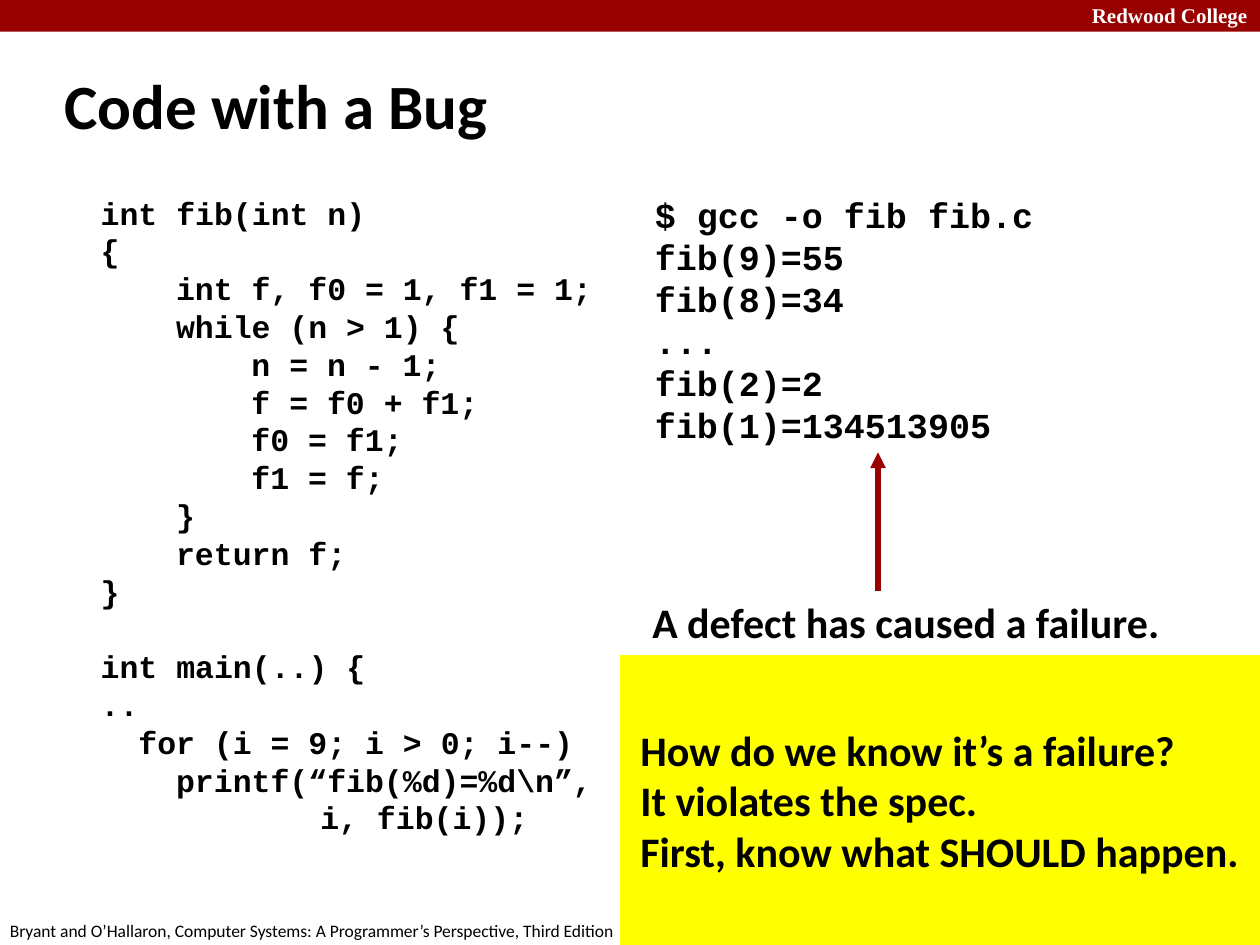
from lxml.etree import SubElement
from pptx import Presentation
from pptx.dml.color import RGBColor
from pptx.enum.shapes import MSO_CONNECTOR, MSO_SHAPE
from pptx.enum.text import MSO_ANCHOR, PP_ALIGN
from pptx.oxml.ns import qn
from pptx.util import Cm, Pt

COLORS = {"red": "990000", "yellow": "FFFF00", "black": "000000", "white": "FFFFFF"}
SANS, MONO, SERIF = "Calibri", "Courier New", "Times New Roman"
CHARACTER_WIDTH = 0.38
CODE_PITCH = 21.6

HEADER = "Redwood College"
FOOTER = "Bryant and O’Hallaron, Computer Systems: A Programmer’s Perspective, Third Edition"
TITLE = "Code with a Bug"
FIB_CODE = [
    (0, "int fib(int n)"),
    (0, "{"),
    (4, "int f, f0 = 1, f1 = 1;"),
    (4, "while (n > 1) {"),
    (8, "n = n - 1;"),
    (8, "f = f0 + f1;"),
    (8, "f0 = f1;"),
    (8, "f1 = f;"),
    (4, "}"),
    (4, "return f;"),
    (0, "}"),
]
MAIN_CODE = [
    (0, "int main(..) {"),
    (0, ".."),
    (2, "for (i = 9; i > 0; i--)"),
    (4, "printf(“fib(%d)=%d\\n”,"),
    (11.65, "i, fib(i));"),
]
OUTPUT = ["$ gcc -o fib fib.c", "fib(9)=55", "fib(8)=34", "...", "fib(2)=2", "fib(1)=134513905"]
CAPTION = "A defect has caused a failure."
ANSWER = ["How do we know it’s a failure?", "It violates the spec.", "First, know what SHOULD happen."]


def color(name):
    """Return the named palette colour."""
    return RGBColor.from_string(COLORS[name])


def write_text(shape, lines, *, size, font=SANS, ink="black", bold=True, wrap=True,
               anchor=MSO_ANCHOR.TOP, align=PP_ALIGN.LEFT, pitch=None):
    """Write the lines as paragraphs in one format and return the paragraphs."""
    frame = shape.text_frame
    frame.word_wrap = wrap
    frame.vertical_anchor = anchor
    frame.text = "\n".join(lines)
    for paragraph in frame.paragraphs:
        paragraph.alignment = align
        if pitch:
            paragraph.line_spacing = Pt(pitch)
        for run in paragraph.runs:
            run.font.name = font
            run.font.size = Pt(size)
            run.font.bold = bold
            run.font.color.rgb = color(ink)
    return frame.paragraphs


def add_text(slide, box, lines, **style):
    """Add a text box and return its paragraphs."""
    return write_text(slide.shapes.add_textbox(*map(Cm, box)), lines, **style)


def add_block(slide, box, fill):
    """Add a plain filled rectangle."""
    shape = slide.shapes.add_shape(MSO_SHAPE.RECTANGLE, *map(Cm, box))
    shape.shadow.inherit = False
    shape.fill.solid()
    shape.fill.fore_color.rgb = color(fill)
    shape.line.fill.background()
    return shape


def add_code(slide, box):
    """Add the listing, indented by whole character widths."""
    code = FIB_CODE + MAIN_CODE
    paragraphs = add_text(slide, box, [text for _, text in code],
                          size=18, font=MONO, pitch=CODE_PITCH)
    for paragraph, (indent, _) in zip(paragraphs, code):
        properties = paragraph._p.get_or_add_pPr()
        properties.set("marL", str(Cm(indent * CHARACTER_WIDTH)))
        properties.set("indent", "0")
    paragraphs[len(FIB_CODE)].space_before = Pt(CODE_PITCH)


def add_arrow(slide, ends):
    """Add a red line with a triangle at its end."""
    arrow = slide.shapes.add_connector(MSO_CONNECTOR.STRAIGHT, *map(Cm, ends))
    arrow.line.color.rgb = color("red")
    arrow.line.width = Pt(3)
    SubElement(arrow.line._get_or_add_ln(), qn("a:tailEnd"), type="triangle")
    SubElement(arrow._element.spPr, qn("a:effectLst"))


def main():
    """Build and save the slide."""
    presentation = Presentation()
    presentation.slide_width, presentation.slide_height = Cm(25.4), Cm(19.05)
    slide = presentation.slides.add_slide(presentation.slide_layouts[5])

    add_block(slide, (0, 0, 25.4, 0.64), "red")
    add_text(slide, (19.4, -0.08, 6, 0.76), [HEADER], size=12, font=SERIF,
             ink="white", align=PP_ALIGN.RIGHT)
    add_text(slide, (-0.05, 18.42, 12.9, 0.69), [FOOTER], size=10, bold=False, wrap=False)

    title = slide.shapes.title
    title.left, title.top, title.width, title.height = map(Cm, (1.04, 1.04, 21.08, 2.11))
    write_text(title, [TITLE], size=36, anchor=MSO_ANCHOR.MIDDLE)

    add_code(slide, (1.78, 3.78, 10.74, 13.82))
    add_text(slide, (12.95, 3.78, 10.74, 13.82), OUTPUT, size=20, font=MONO, pitch=24)
    add_arrow(slide, (17.7, 11.91, 17.7, 9.12))
    add_text(slide, (12.9, 11.91, 10.85, 1.27), [CAPTION], size=24, wrap=False)

    answer = add_block(slide, (12.5, 13.21, 12.9, 5.84), "yellow")
    write_text(answer, ANSWER, size=24, anchor=MSO_ANCHOR.MIDDLE)
    answer.text_frame.margin_left = Cm(0.41)

    presentation.save("out.pptx")


if __name__ == "__main__":
    main()
